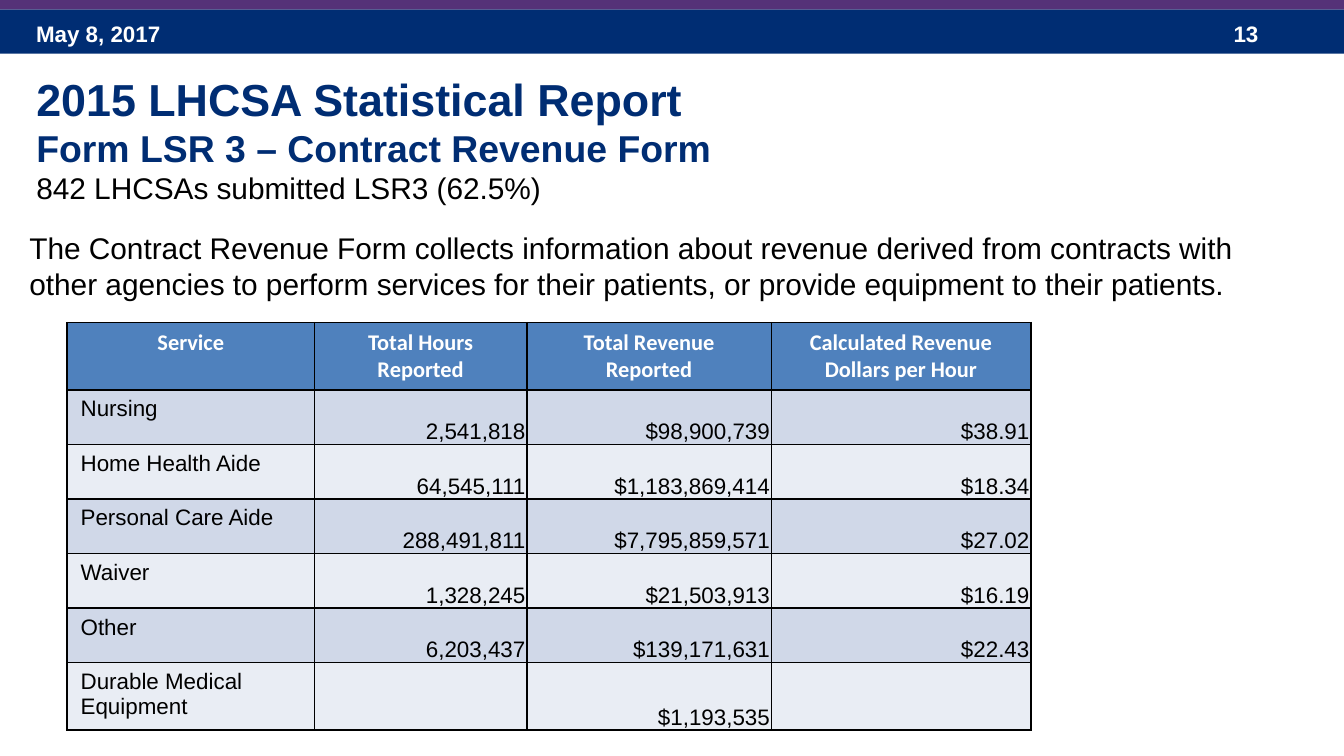
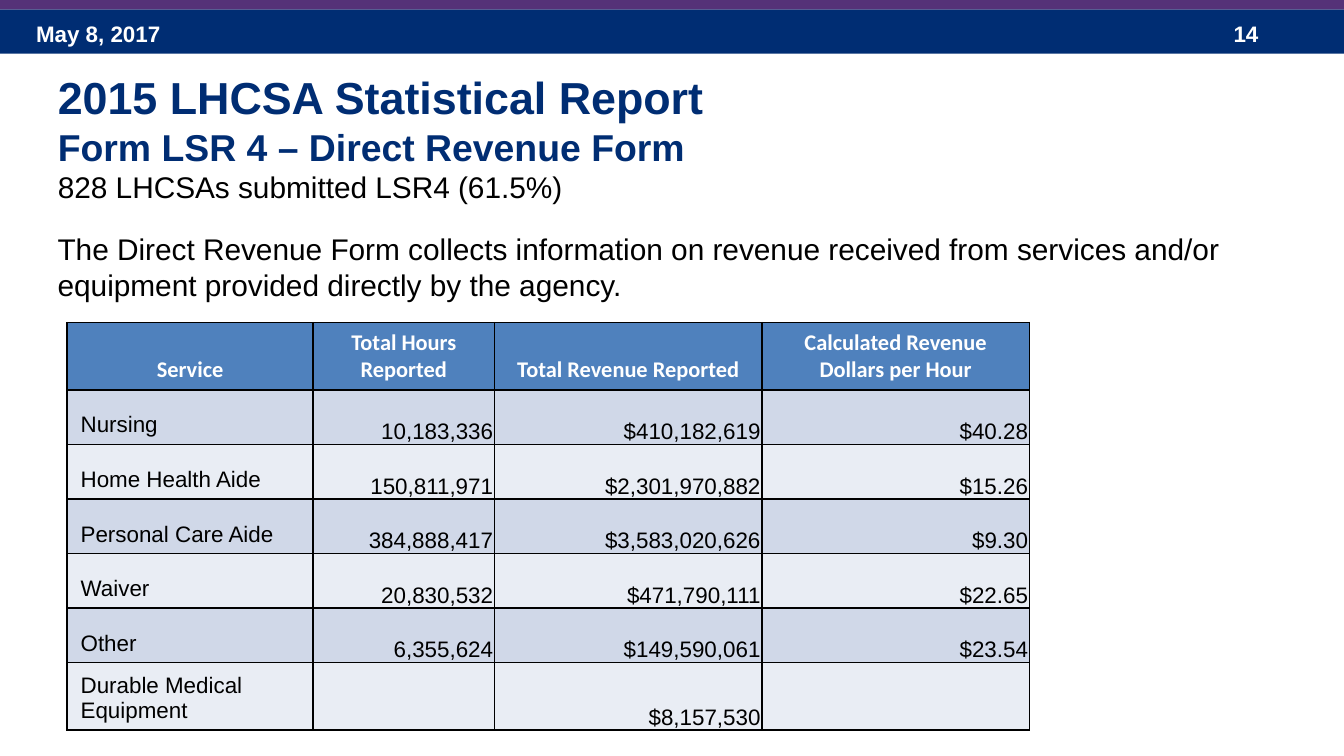
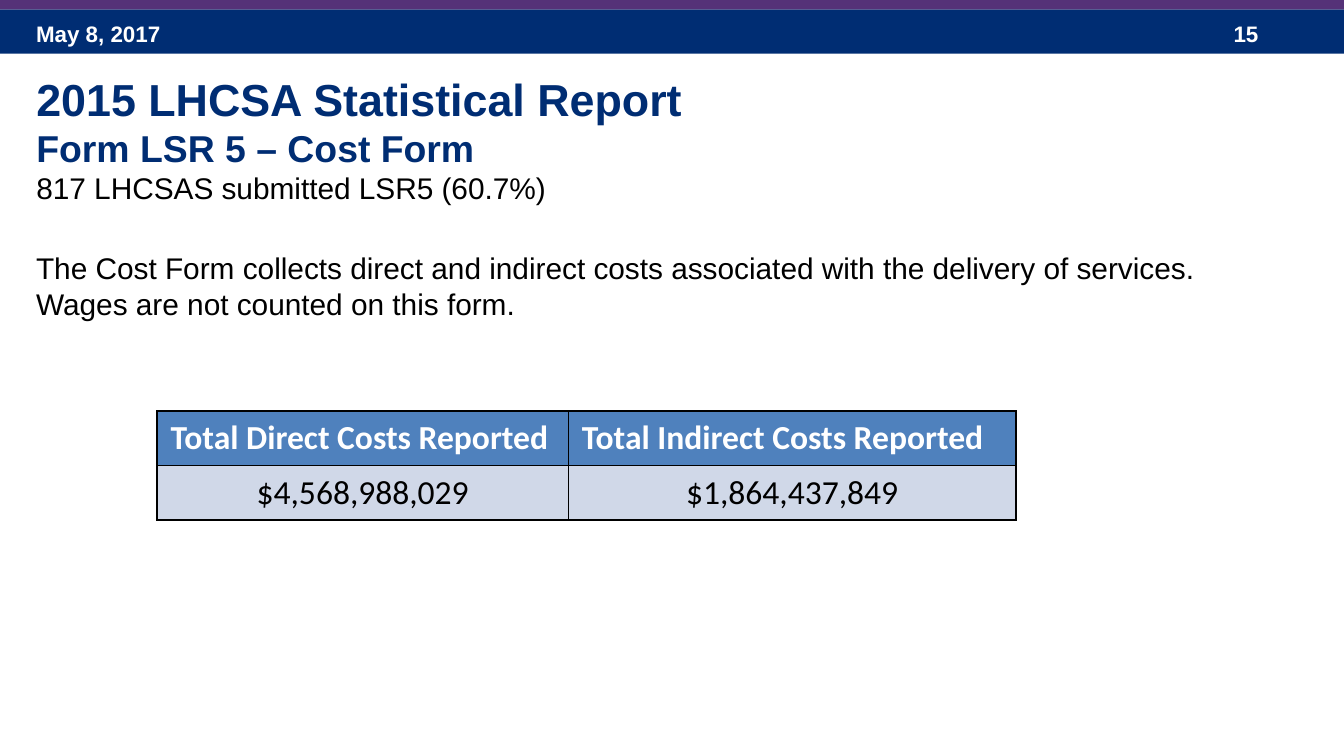
from lxml.etree import SubElement
from pptx import Presentation
from pptx.dml.color import RGBColor
from pptx.enum.shapes import MSO_SHAPE
from pptx.enum.text import MSO_ANCHOR, MSO_AUTO_SIZE, PP_ALIGN
from pptx.oxml.ns import qn
from pptx.util import Inches, Pt

NAVY = RGBColor(0x00, 0x2D, 0x73)
PURPLE = RGBColor(0x55, 0x32, 0x78)
HEADER_BLUE = RGBColor(0x4F, 0x81, 0xBD)
BAND_DARK = RGBColor(0xD0, 0xD8, 0xE8)
BAND_LIGHT = RGBColor(0xE9, 0xED, 0xF4)
WHITE = RGBColor(0xFF, 0xFF, 0xFF)
BLACK = RGBColor(0x00, 0x00, 0x00)

TITLE = "2015 LHCSA Statistical Report"
DATE = "May 8, 2017"
REVENUE_HEADERS = ["Service", "Total Hours Reported", "Total Revenue Reported",
                   "Calculated Revenue Dollars per Hour"]
TABLE_TOP, TABLE_HEIGHT, TALL_ROW = 2.4, 3.03, 0.5


def write(para, text, size=16, font="Arial", color=BLACK, bold=False, align=PP_ALIGN.LEFT):
    """Put one formatted span into a paragraph."""
    span = para.add_run()
    span.text = text
    span.font.size = Pt(size)
    span.font.name = font
    span.font.color.rgb = color
    span.font.bold = bold
    para.alignment = align


def add_text(page, left, top, width, height, text, anchor=MSO_ANCHOR.TOP, **style):
    box = page.shapes.add_textbox(Inches(left), Inches(top), Inches(width), Inches(height))
    frame = box.text_frame
    frame.word_wrap = True
    frame.vertical_anchor = anchor
    write(frame.paragraphs[0], text, **style)


def add_band(page, top, height, color):
    band = page.shapes.add_shape(MSO_SHAPE.RECTANGLE, 0, Inches(top), Inches(10), Inches(height))
    band.shadow.inherit = False
    band.fill.solid()
    band.fill.fore_color.rgb = color
    band.line.fill.background()


def add_header(page, number):
    """Coloured bands with the date and the page number."""
    add_band(page, 0.07, 0.33, NAVY)
    for left, width, text in ((0.17, 2.33, DATE), (9.08, 0.75, str(number))):
        add_text(page, left, 0.1, width, 0.3, text, anchor=MSO_ANCHOR.MIDDLE,
                 size=12, color=WHITE, bold=True)
    add_band(page, -0.02, 0.09, PURPLE)


def add_title(page, left, top, form, submitted):
    title = page.shapes.title
    title.left, title.top = Inches(left), Inches(top)
    title.width, title.height = Inches(9.5), Inches(1.65)
    frame = title.text_frame
    frame.word_wrap = True
    frame.auto_size = MSO_AUTO_SIZE.NONE
    frame.vertical_anchor = MSO_ANCHOR.TOP
    write(frame.paragraphs[0], TITLE, size=24, color=NAVY, bold=True)
    write(frame.add_paragraph(), form, size=20, color=NAVY, bold=True)
    write(frame.add_paragraph(), submitted)


def add_page(deck, number, form, submitted, summary, title_at, summary_at):
    """Page with everything but its table."""
    page = deck.slides.add_slide(deck.slide_layouts[5])
    add_header(page, number)
    add_title(page, *title_at, form, submitted)
    add_text(page, *summary_at, 9.58, 0.64, summary)
    return page


def style_cell(cell, color):
    """Black border on all sides, then the fill."""
    properties = cell._tc.get_or_add_tcPr()
    for side in ("a:lnL", "a:lnR", "a:lnT", "a:lnB"):
        line = SubElement(properties, qn(side), w=str(Pt(1)))
        SubElement(SubElement(line, qn("a:solidFill")), qn("a:srgbClr"), val=str(BLACK))
    cell.fill.solid()
    cell.fill.fore_color.rgb = color


def add_grid(page, left, top, widths, height, row_count):
    """Table with a blue first row and banded rows below it."""
    table = page.shapes.add_table(row_count, len(widths), Inches(left), Inches(top),
                                  Inches(sum(widths)), Inches(height)).table
    table.horz_banding = False
    for column, width in zip(table.columns, widths):
        column.width = Inches(width)
    for index in range(row_count):
        color = HEADER_BLUE if index == 0 else (BAND_LIGHT, BAND_DARK)[index % 2]
        for cell in table.rows[index].cells:
            style_cell(cell, color)
    return table


def add_revenue_table(page, widths, services, label_anchor):
    rows = [REVENUE_HEADERS] + services
    table = add_grid(page, 0.5, TABLE_TOP, widths, TABLE_HEIGHT, len(rows))
    last = len(rows) - 1
    for index, values in enumerate(rows):
        # The first and last rows hold two lines; the others share the rest
        table.rows[index].height = Inches(
            TALL_ROW if index in (0, last) else (TABLE_HEIGHT - 2 * TALL_ROW) / (last - 1))
        for column, text in enumerate(values):
            if not text:
                continue
            cell = table.cell(index, column)
            para = cell.text_frame.paragraphs[0]
            cell.vertical_anchor = label_anchor
            if index == 0:
                write(para, text, size=12, font="Calibri", color=WHITE, bold=True,
                      align=PP_ALIGN.CENTER)
            elif column == 0:
                write(para, text, size=12)
            else:
                cell.vertical_anchor = MSO_ANCHOR.BOTTOM
                cell.margin_left = cell.margin_top = cell.margin_right = Inches(0.01)
                cell.margin_bottom = 0
                write(para, text, size=12, align=PP_ALIGN.RIGHT)


def add_cost_table(page, costs):
    table = add_grid(page, 1.17, 3.06, [3.06, 3.33], 0.81, 2)
    for column, (label, amount) in enumerate(costs):
        write(table.cell(0, column).text_frame.paragraphs[0], label, size=18,
              font="Calibri", color=WHITE, bold=True)
        write(table.cell(1, column).text_frame.paragraphs[0], amount, size=18,
              font="Calibri", align=PP_ALIGN.CENTER)


def main():
    deck = Presentation()
    # Widescreen, 16 to 9
    deck.slide_width = Inches(10)
    deck.slide_height = deck.slide_width * 9 // 16

    # Contract revenue
    page = add_page(
        deck, 13, "Form LSR 3 – Contract Revenue Form", "842 LHCSAs submitted LSR3 (62.5%)",
        "The Contract Revenue Form collects information about revenue derived from contracts "
        "with other agencies to perform services for their patients, or provide equipment to "
        "their patients.", title_at=(0.17, 0.48), summary_at=(0.12, 1.66))
    add_revenue_table(page, [1.84, 1.58, 1.82, 1.93], [
        ["Nursing", "2,541,818", "$98,900,739", "$38.91"],
        ["Home Health Aide", "64,545,111", "$1,183,869,414", "$18.34"],
        ["Personal Care Aide", "288,491,811", "$7,795,859,571", "$27.02"],
        ["Waiver", "1,328,245", "$21,503,913", "$16.19"],
        ["Other", "6,203,437", "$139,171,631", "$22.43"],
        ["Durable Medical Equipment", "", "$1,193,535", ""],
    ], MSO_ANCHOR.TOP)

    # Direct revenue
    page = add_page(
        deck, 14, "Form LSR 4 – Direct Revenue Form", "828 LHCSAs submitted LSR4 (61.5%)",
        "The Direct Revenue Form collects information on revenue received from services and/or "
        "equipment provided directly by the agency.",
        title_at=(0.33, 0.47), summary_at=(0.33, 1.67))
    add_revenue_table(page, [1.83, 1.35, 1.99, 1.99], [
        ["Nursing", "10,183,336", "$410,182,619", "$40.28"],
        ["Home Health Aide", "150,811,971", "$2,301,970,882", "$15.26"],
        ["Personal Care Aide", "384,888,417", "$3,583,020,626", "$9.30"],
        ["Waiver", "20,830,532", "$471,790,111", "$22.65"],
        ["Other", "6,355,624", "$149,590,061", "$23.54"],
        ["Durable Medical Equipment", "", "$8,157,530", ""],
    ], MSO_ANCHOR.BOTTOM)

    # Costs
    page = add_page(
        deck, 15, "Form LSR 5 – Cost Form", "817 LHCSAS submitted LSR5 (60.7%)",
        "The Cost Form collects direct and indirect costs associated with the delivery of "
        "services.  Wages are not counted on this form.",
        title_at=(0.17, 0.48), summary_at=(0.17, 1.81))
    add_cost_table(page, [("Total Direct Costs Reported", "$4,568,988,029"),
                          ("Total Indirect Costs Reported", "$1,864,437,849")])

    deck.save("out.pptx")


if __name__ == "__main__":
    main()
